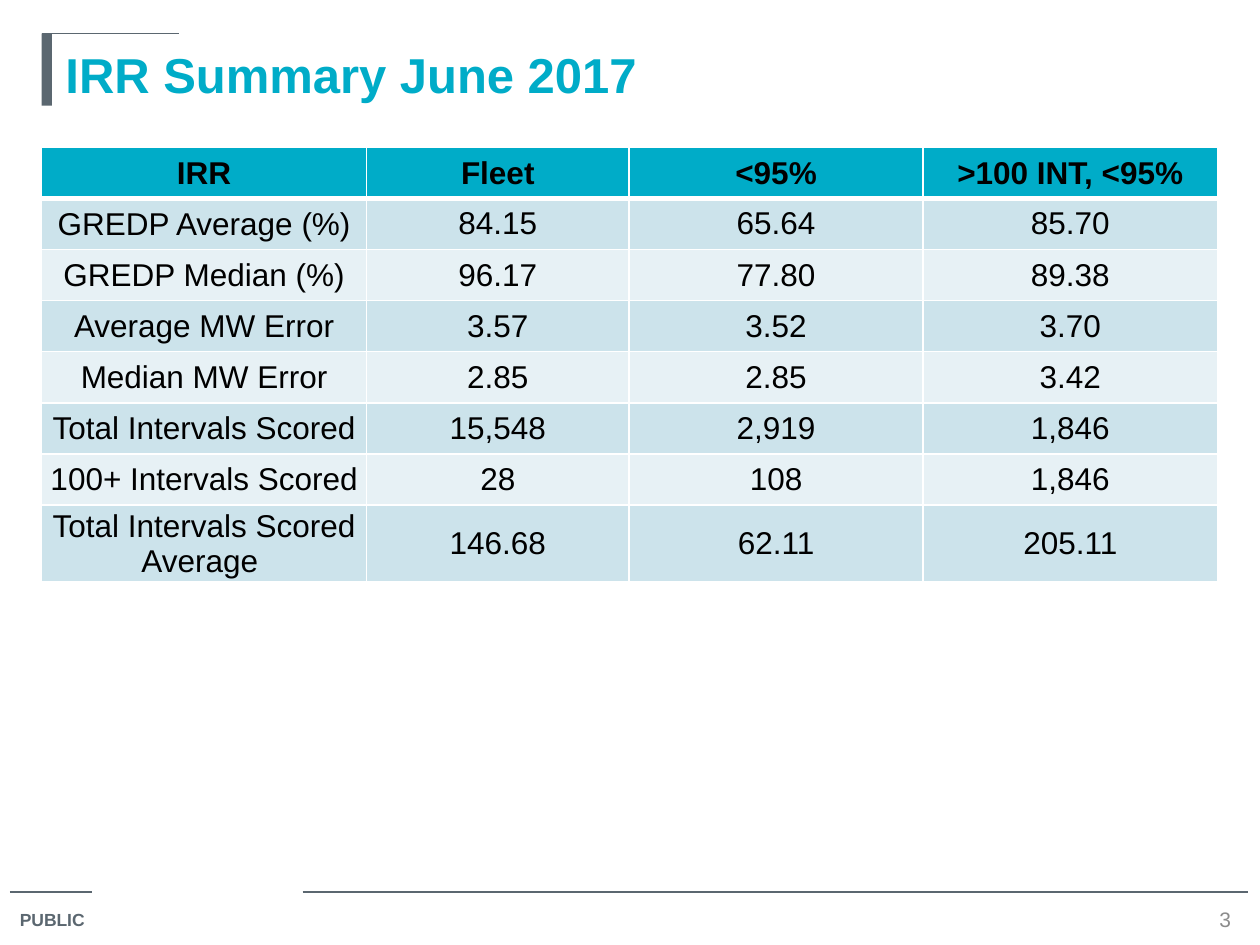
from pptx import Presentation
from pptx.dml.color import RGBColor
from pptx.enum.shapes import MSO_CONNECTOR, MSO_SHAPE
from pptx.enum.text import MSO_ANCHOR, MSO_AUTO_SIZE, PP_ALIGN
from pptx.oxml.ns import qn
from pptx.util import Cm, Pt
from lxml.etree import SubElement

TEAL = RGBColor(0x00, 0xAC, 0xC8)
SLATE = RGBColor(0x5B, 0x67, 0x70)
GRAY = RGBColor(0x8C, 0x8C, 0x8C)
BLACK = RGBColor(0x00, 0x00, 0x00)
WHITE = RGBColor(0xFF, 0xFF, 0xFF)
BAND_DARK = RGBColor(0xCC, 0xE3, 0xEB)
BAND_LIGHT = RGBColor(0xE7, 0xF1, 0xF5)


def add_run(p, text, size, color, bold=False):
    r = p.add_run()
    r.text = text
    r.font.name = "Arial"
    r.font.size = Pt(size)
    r.font.bold = bold
    r.font.color.rgb = color


def add_border(cell, side, width):
    ln = SubElement(cell._tc.get_or_add_tcPr(), qn(f"a:ln{side}"), w=str(Pt(width)))
    fill = SubElement(ln, qn("a:solidFill"))
    SubElement(fill, qn("a:srgbClr"), val=str(WHITE))


prs = Presentation()
prs.slide_width, prs.slide_height = Cm(25.4), Cm(19.05)
s = prs.slides.add_slide(prs.slide_layouts[6])

# Footer rules and the thin line above the title
for x1, x2, y in [(0.2, 1.85, 17.98), (6.1, 25.15, 17.98), (0.84, 3.6, 0.68)]:
    line = s.shapes.add_connector(MSO_CONNECTOR.STRAIGHT, Cm(x1), Cm(y), Cm(x2), Cm(y))
    line.line.color.rgb = SLATE
    line.line.width = Pt(0.75)
    SubElement(line._element.spPr, qn("a:effectLst"))

# Title bar
sp = s.shapes.add_shape(MSO_SHAPE.RECTANGLE, Cm(0.84), Cm(0.68), Cm(0.21), Cm(1.45))
sp.shadow.inherit = False
sp.fill.solid()
sp.fill.fore_color.rgb = SLATE
sp.line.fill.background()

# Title
tf = s.shapes.add_textbox(Cm(1.07), Cm(0.68), Cm(23.5), Cm(1.98)).text_frame
tf.word_wrap = True
tf.margin_top = Cm(0.22)
add_run(tf.paragraphs[0], "IRR Summary June 2017", 28, TEAL, True)

# Footer label
tf = s.shapes.add_textbox(Cm(0.15), Cm(18.21), Cm(1.96), Cm(0.7)).text_frame
tf.word_wrap = False
tf.auto_size = MSO_AUTO_SIZE.SHAPE_TO_FIT_TEXT
add_run(tf.paragraphs[0], "PUBLIC", 10, SLATE, True)

# Page number
tf = s.shapes.add_textbox(Cm(24.38), Cm(18.24), Cm(0.64), Cm(0.58)).text_frame
tf.margin_left = tf.margin_right = tf.margin_top = tf.margin_bottom = 0
tf.vertical_anchor = MSO_ANCHOR.MIDDLE
tf.paragraphs[0].alignment = PP_ALIGN.CENTER
add_run(tf.paragraphs[0], "3", 12, GRAY)

# Summary table
rows = [
    ("IRR", "Fleet", "<95%", ">100 INT, <95%"),
    ("GREDP Average (%)", "84.15", "65.64", "85.70"),
    ("GREDP Median (%)", "96.17", "77.80", "89.38"),
    ("Average MW Error", "3.57", "3.52", "3.70"),
    ("Median MW Error", "2.85", "2.85", "3.42"),
    ("Total Intervals Scored", "15,548", "2,919", "1,846"),
    ("100+ Intervals Scored", "28", "108", "1,846"),
    ("Total Intervals Scored Average ", "146.68", "62.11", "205.11"),
]
col_widths = [6.55, 5.29, 5.93, 5.93]
row_height = 1.03

table = s.shapes.add_table(len(rows), len(col_widths), Cm(0.84), Cm(2.97),
                           Cm(sum(col_widths)), Cm(row_height * len(rows))).table
for col, width in zip(table.columns, col_widths):
    col.width = Cm(width)

for i, values in enumerate(rows):
    table.rows[i].height = Cm(row_height)
    header = i == 0
    for j, value in enumerate(values):
        cell = table.cell(i, j)
        inset = Cm(0.02) if header or j == 0 else 0
        cell.margin_left = cell.margin_right = cell.margin_top = inset
        cell.margin_bottom = 0
        cell.vertical_anchor = MSO_ANCHOR.MIDDLE
        for side in "LRTB":
            thick = (header and side == "B") or (i == 1 and side == "T")
            add_border(cell, side, 3 if thick else 1)
        cell.fill.solid()
        cell.fill.fore_color.rgb = TEAL if header else BAND_DARK if i % 2 else BAND_LIGHT
        p = cell.text_frame.paragraphs[0]
        p.alignment = PP_ALIGN.CENTER
        add_run(p, value, 18, BLACK, header)

prs.save("out.pptx")
